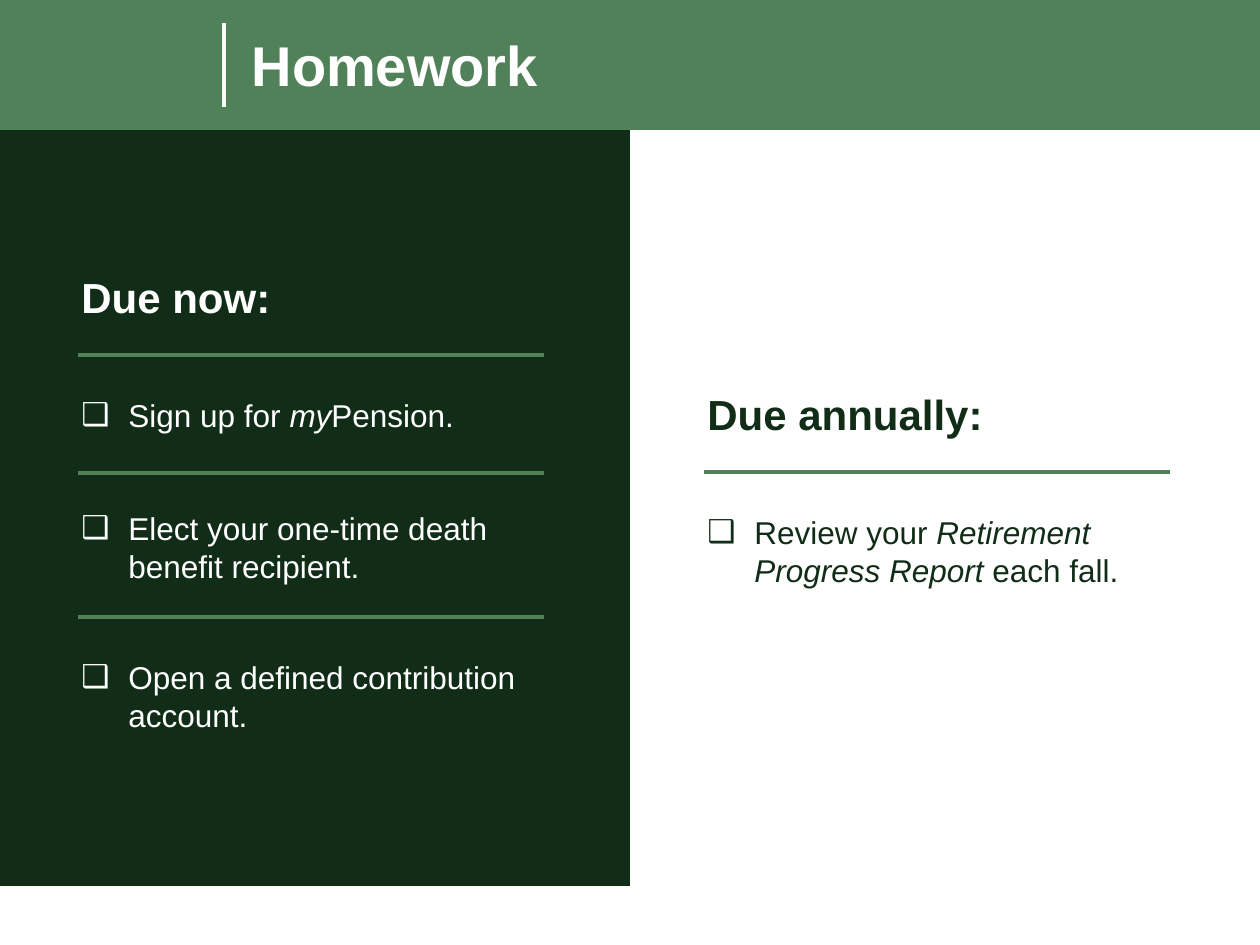
from lxml import etree
from pptx import Presentation
from pptx import util as u
from pptx.dml.color import RGBColor
from pptx.enum import shapes, text
from pptx.oxml.ns import qn

PX = 914400 // 126
DARK = RGBColor(0x11, 0x2D, 0x18)
GREEN = RGBColor(0x51, 0x81, 0x59)
WHITE = RGBColor(0xFF, 0xFF, 0xFF)
FONT = "Arial"
INDENT = 47
RULE_INSET, RULE_WIDTH = 9, 466


def px(*lengths):
    return [u.Emu(length * PX) for length in lengths]


def add_band(page, left, top, width, height, color):
    band = page.shapes.add_shape(
        shapes.MSO_SHAPE.RECTANGLE, *px(left, top, width, height))
    band.shadow.inherit = False
    band.fill.solid()
    band.fill.fore_color.rgb = color
    band.line.fill.background()


def add_rule(page, x1, y1, x2, y2, color):
    rule = page.shapes.add_connector(
        shapes.MSO_CONNECTOR.STRAIGHT, *px(x1, y1, x2, y2))
    rule.line.color.rgb = color
    rule.line.width = u.Pt(2.25)
    etree.SubElement(rule._element.spPr, qn("a:effectLst"))


def write(para, content, size, color, bold=False):
    """Fill a paragraph; parts between asterisks are italic."""
    for index, part in enumerate(content.split("*")):
        span = para.add_run()
        span.text = part
        span.font.name = FONT
        span.font.size = u.Pt(size)
        span.font.color.rgb = color
        span.font.bold = bold
        span.font.italic = index % 2 == 1


def add_text(page, left, top, width, height, content, bullet=None, **style):
    box = page.shapes.add_textbox(*px(left, top, width, height))
    box.text_frame.word_wrap = True
    para = box.text_frame.paragraphs[0]
    if bullet:
        props = para._p.get_or_add_pPr()
        props.set("marL", str(INDENT * PX))
        props.set("indent", str(-INDENT * PX))
        etree.SubElement(props, qn("a:buFont")).set("typeface", FONT)
        etree.SubElement(props, qn("a:buChar")).set("char", bullet)
    write(para, content, **style)


def add_header(page, left, top, width, height):
    add_band(page, left, top, width, height, GREEN)
    add_rule(page, left + 224, top + 23, left + 224, top + 107, WHITE)
    title = page.shapes.title
    # The placeholder comes first in the tree; put it in front of the band.
    page.shapes._spTree.append(title._element)
    title.left, title.top, title.width, title.height = px(
        left + 239, top + 25, 984, 83)
    frame = title.text_frame
    frame.auto_size = text.MSO_AUTO_SIZE.NONE
    frame.vertical_anchor = text.MSO_ANCHOR.MIDDLE
    frame.margin_left, frame.margin_top, frame.margin_right, frame.margin_bottom = (
        u.Inches(inset) for inset in (0.1, 0.08, 0.1, 0.05))
    para = frame.paragraphs[0]
    para.alignment = text.PP_ALIGN.LEFT
    para.line_spacing = 0.9
    write(para, "Homework", size=32, color=WHITE, bold=True)


def add_checklist(page, left, top, heading, tasks, color):
    """Tasks are (rule offset, text offset, width, height, content)."""
    add_text(page, left, top, 432, 63, heading, size=24, color=color, bold=True)
    for rule_top, task_top, width, height, content in tasks:
        rule_left, rule_y = left + RULE_INSET, top + rule_top
        add_rule(page, rule_left, rule_y, rule_left + RULE_WIDTH, rule_y, GREEN)
        add_text(page, left, top + task_top, width, height, content,
                 bullet="❑", size=18, color=color)


def main():
    deck = Presentation()
    deck.slide_width, deck.slide_height = px(1260, 945)
    page = deck.slides.add_slide(deck.slide_layouts[5])
    add_band(page, 0, 130, 630, 756, DARK)
    add_header(page, 0, 0, 1260, 130)
    add_checklist(page, 69, 265, "Due now:", [
        (90, 125, 486, 50, "Sign up for *my*Pension."),
        (208, 238, 432, 89, "Elect your one-time death benefit recipient."),
        (352, 387, 475, 89, "Open a defined contribution account."),
    ], WHITE)
    add_checklist(page, 695, 382, "Due annually:", [
        (90, 125, 486, 89, "Review your *Retirement Progress Report* each fall."),
    ], DARK)
    deck.save("out.pptx")


if __name__ == "__main__":
    main()
